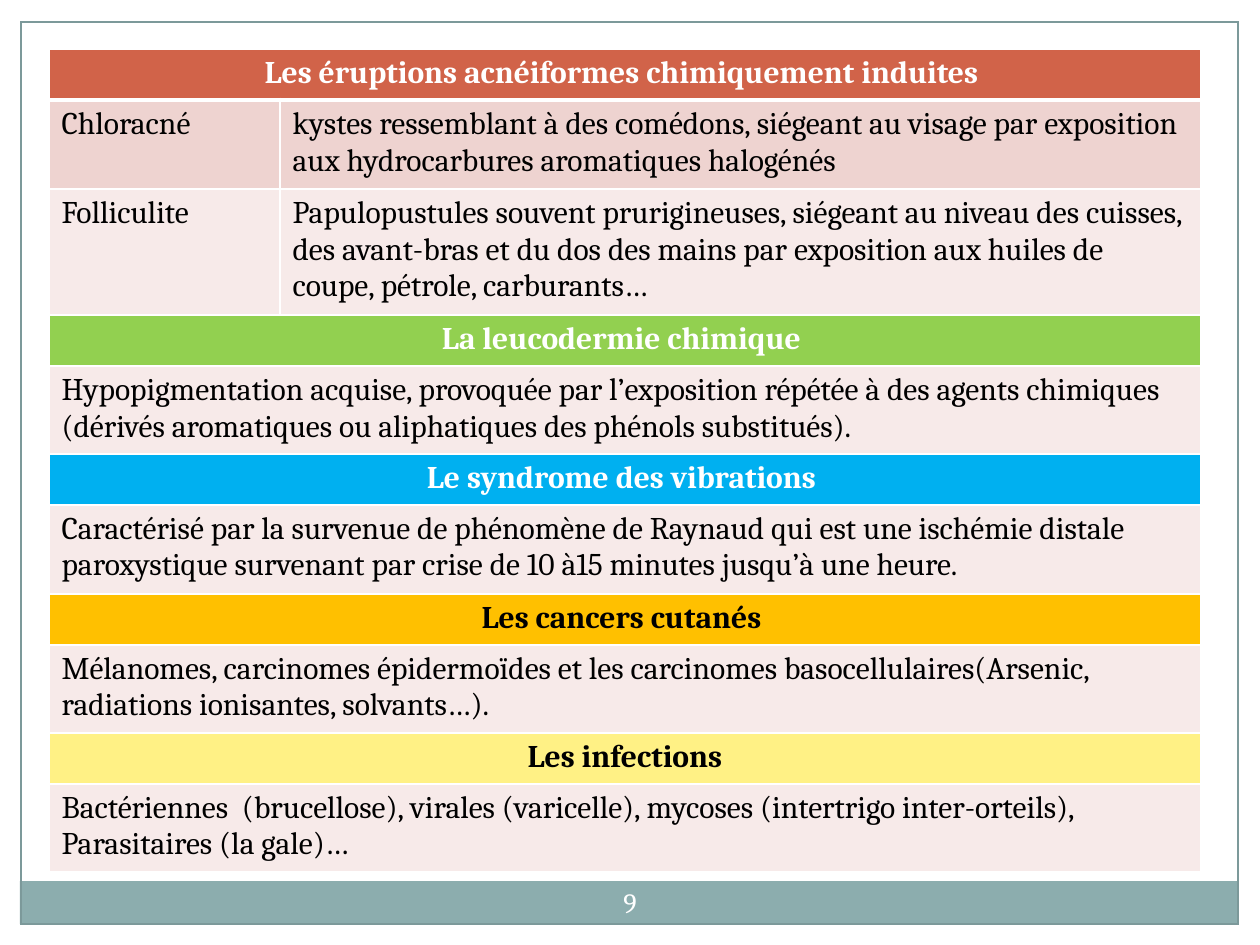
from lxml import etree
from pptx import Presentation
from pptx import util as u
from pptx.dml.color import RGBColor
from pptx.enum import shapes, text
from pptx.oxml import parse_xml
from pptx.oxml.ns import nsdecls, qn

PX = 914400 / 126
COLORS = {
    "white": "FFFFFF", "black": "000000", "band": "8CADAE", "frame": "7C999A",
    "red": "D16349", "rose": "EED3D0", "pale": "F7EAE9", "green": "92D050",
    "blue": "00B0F0", "amber": "FFC000", "yellow": "FFF185",
}
HEAD, TWO_LINES, TWO_LINES_LOOSE, THREE_LINES = 51, 88, 89, 126

# Row height, fill, text colour, bold, cell texts (a single text spans both columns)
ROWS = [
    (HEAD, "red", "white", True, ["Les éruptions acnéiformes chimiquement induites "]),
    (TWO_LINES_LOOSE, "rose", "black", False, [
        "Chloracné",
        "kystes ressemblant à des comédons, siégeant au visage par exposition "
        "aux hydrocarbures aromatiques halogénés"]),
    (THREE_LINES, "pale", "black", False, [
        "Folliculite",
        "Papulopustules souvent prurigineuses, siégeant au niveau des cuisses, "
        "des avant-bras et du dos des mains par exposition aux huiles de coupe, "
        "pétrole, carburants…"]),
    (HEAD, "green", "white", True, ["La leucodermie chimique "]),
    (TWO_LINES, "pale", "black", False, [
        "Hypopigmentation acquise, provoquée par l’exposition répétée à des agents "
        "chimiques (dérivés aromatiques ou aliphatiques des phénols substitués)."]),
    (HEAD, "blue", "white", True, ["Le syndrome des vibrations "]),
    (TWO_LINES_LOOSE, "pale", "black", False, [
        "Caractérisé par la survenue de phénomène de Raynaud qui est une ischémie "
        "distale paroxystique survenant par crise de 10 à15 minutes jusqu’à une heure."]),
    (HEAD, "amber", "black", True, ["Les cancers cutanés "]),
    (TWO_LINES, "pale", "black", False, [
        "Mélanomes, carcinomes épidermoïdes et les carcinomes basocellulaires(Arsenic, "
        "radiations ionisantes, solvants…)."]),
    (HEAD, "yellow", "black", True, ["Les infections"]),
    (TWO_LINES, "pale", "black", False, [
        "Bactériennes  (brucellose), virales (varicelle), mycoses (intertrigo "
        "inter-orteils),\nParasitaires (la gale)…"]),
]


def px(*lengths):
    return [round(length * PX) for length in lengths]


def write(frame, words, size=18, color="black", bold=False, centered=False):
    frame.word_wrap = True
    frame.text = words
    for para in frame.paragraphs:
        para.alignment = text.PP_ALIGN.CENTER if centered else text.PP_ALIGN.LEFT
        for span in para.runs:
            span.font.name = "Cambria"
            span.font.size = u.Pt(size)
            span.font.bold = bold
            span.font.color.rgb = RGBColor.from_string(COLORS[color])


deck = Presentation()
deck.slide_width, deck.slide_height = px(1260, 945)
page = deck.slides.add_slide(deck.slide_layouts[6])

# White page margins, footer band and page frame
for area, fill in [((0, 0, 1260, 21), "white"), ((1239, 0, 21, 945), "white"),
                   ((0, 0, 21, 945), "white"), ((20, 881, 1218, 43), "band")]:
    strip = page.shapes.add_shape(shapes.MSO_SHAPE.RECTANGLE, *px(*area))
    strip.shadow.inherit = False
    strip.fill.solid()
    strip.fill.fore_color.rgb = RGBColor.from_string(COLORS[fill])
    strip.line.fill.background()
frame = page.shapes.add_shape(shapes.MSO_SHAPE.RECTANGLE, *px(21, 22, 1217, 902))
frame.shadow.inherit = False
frame.fill.background()
frame.line.color.rgb = RGBColor.from_string(COLORS["frame"])
frame.line.width = u.Pt(0.75)
etree.SubElement(frame.line._get_or_add_ln(), qn("a:miter"), lim="800000")

# Table of skin conditions
height = sum(row[0] for row in ROWS)
table = page.shapes.add_table(len(ROWS), 2, *px(49, 49, 1152, height)).table
table.first_row = table.horz_banding = False
for column, width in zip(table.columns, px(231, 921)):
    column.width = width

for index, (row_height, fill, color, bold, words) in enumerate(ROWS):
    table.rows[index].height = px(row_height)[0]
    cells = [table.cell(index, column) for column in range(2)]
    if len(words) == 1:
        cells[0].merge(cells[1])
    for cell in cells:
        for side in "LRTB":
            thick = (index, side) in ((0, "B"), (1, "T"))
            cell._tc.get_or_add_tcPr().append(parse_xml(
                f'<a:ln{side} {nsdecls("a")} w="{u.Pt(3 if thick else 1)}"><a:solidFill>'
                f'<a:srgbClr val="{COLORS["white"]}"/></a:solidFill></a:ln{side}>'))
        cell.fill.solid()
        cell.fill.fore_color.rgb = RGBColor.from_string(COLORS[fill])
    for cell, content in zip(cells, words):
        write(cell.text_frame, content, color=color, bold=bold, centered=bold)

# Page number
number = page.shapes.add_textbox(*px(588, 872, 84, 60)).text_frame
number.margin_left = number.margin_right = px(6)[0]
number.vertical_anchor = text.MSO_ANCHOR.MIDDLE
write(number, "9", size=16, color="white", centered=True)

deck.save("out.pptx")
